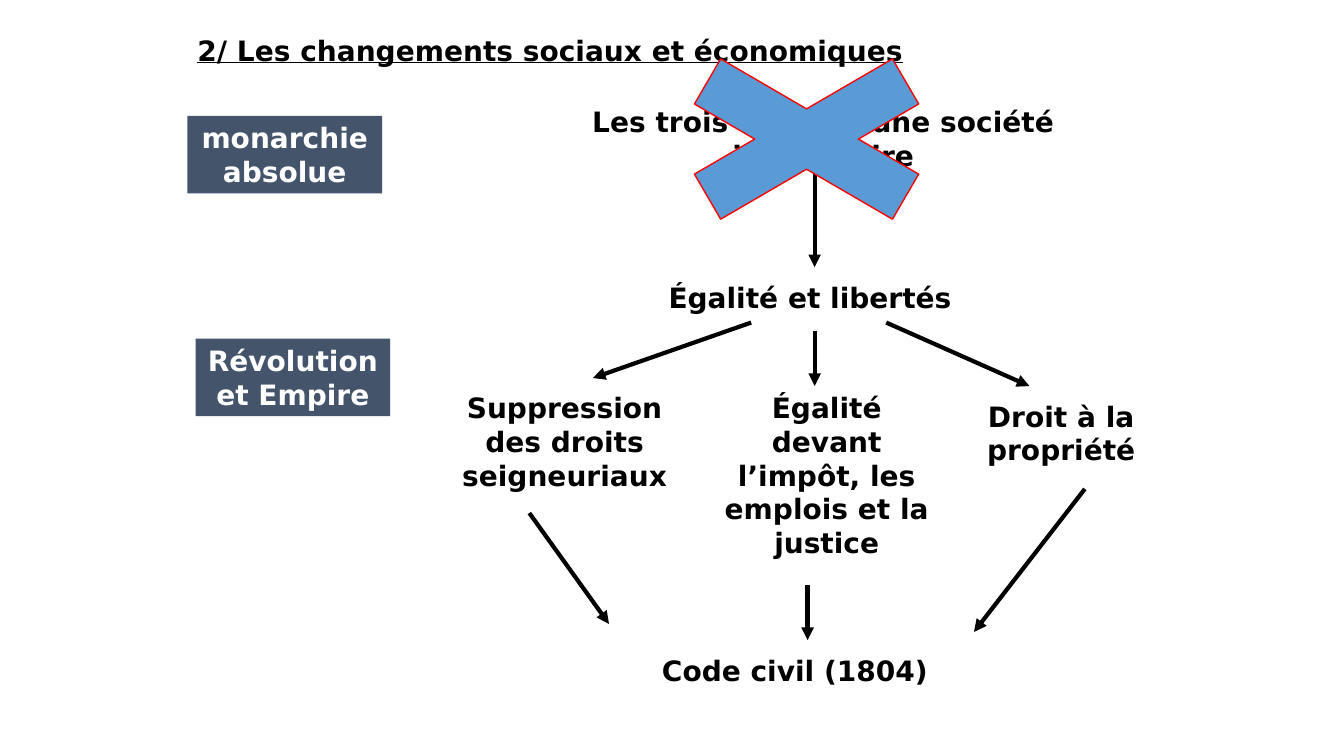
import pptx
import pptx.dml.color
import pptx.enum.shapes
import pptx.enum.text
import pptx.oxml
import pptx.oxml.ns
import pptx.util
from dataclasses import dataclass

Inches = pptx.util.Inches
Pt = pptx.util.Pt
Shape = pptx.enum.shapes.MSO_SHAPE
Align = pptx.enum.text.PP_ALIGN

FONT = "DejaVu Sans"
BLACK, WHITE, SLATE = "000000", "FFFFFF", "44546A"
BLUE, RED = "5B9BD5", "FF0000"
ROW = 0.43  # height of a one-line box
PAIR = 0.77  # height of a two-line box


@dataclass
class Box:
    text: str
    left: float
    top: float
    width: float
    height: float = ROW
    fill: str = WHITE
    ink: str = BLACK


@dataclass
class Arrow:
    x1: float
    y1: float
    x2: float
    y2: float


BOXES = [
    Box("Les trois ordres : une société inégalitaire", 4.86, 0.99, 6.61),
    Box("Égalité et libertés", 4.53, 2.73, 7.01),
    Box("Suppression des droits seigneuriaux", 4.46, 3.83, 2.28, 1.1),
    Box("Égalité devant l’impôt, les emplois et la justice", 7.06, 3.83, 2.28, 1.77),
    Box("Droit à la propriété", 9.58, 3.91, 1.89, PAIR),
    Box("Code civil (1804)", 4.38, 6.43, 7.01),
    # Period labels
    Box("monarchie absolue", 1.86, 1.15, 1.93, PAIR, SLATE, WHITE),
    Box("Révolution et Empire", 1.94, 3.36, 1.93, PAIR, SLATE, WHITE),
]

ARROWS = [
    Arrow(8.08, 1.47, 8.08, 2.65),
    # From equality to the three rights
    Arrow(7.45, 3.2, 5.88, 3.75),
    Arrow(8.08, 3.28, 8.08, 3.83),
    Arrow(8.79, 3.2, 10.21, 3.83),
    # From the rights to the civil code
    Arrow(5.25, 5.09, 6.04, 6.19),
    Arrow(8.01, 5.8, 8.01, 6.35),
    Arrow(10.76, 4.85, 9.66, 6.27),
]


def hue(code: str) -> pptx.dml.color.RGBColor:
    return pptx.dml.color.RGBColor.from_string(code)


def paint(shape, fill: str) -> None:
    shape.shadow.inherit = False
    shape.fill.solid()
    shape.fill.fore_color.rgb = hue(fill)


def write(shape, text: str, ink: str, align):
    frame = shape.text_frame
    frame.word_wrap = True
    frame.auto_size = pptx.enum.text.MSO_AUTO_SIZE.SHAPE_TO_FIT_TEXT
    frame.vertical_anchor = pptx.enum.text.MSO_ANCHOR.TOP
    para = frame.paragraphs[0]
    para.text = text
    para.alignment = align
    font = para.font
    font.name, font.size, font.bold = FONT, Pt(20), True
    font.color.rgb = hue(ink)
    return para


def draw_box(shapes, box: Box) -> None:
    shape = shapes.add_shape(Shape.RECTANGLE, Inches(box.left), Inches(box.top),
                             Inches(box.width), Inches(box.height))
    paint(shape, box.fill)
    shape.line.fill.background()
    write(shape, box.text, box.ink, Align.CENTER)


def draw_arrow(shapes, arrow: Arrow) -> None:
    line = shapes.add_connector(
        pptx.enum.shapes.MSO_CONNECTOR.STRAIGHT, Inches(arrow.x1), Inches(arrow.y1),
        Inches(arrow.x2), Inches(arrow.y2))
    line.line.color.rgb = hue(BLACK)
    line.line.width = Pt(3)
    # Arrowhead, and no shadow
    space = pptx.oxml.ns.nsdecls("a")
    head = pptx.oxml.parse_xml(f'<a:tailEnd {space} type="triangle"/>')
    line.line._get_or_add_ln().append(head)
    line._element.spPr.append(pptx.oxml.parse_xml(f"<a:effectLst {space}/>"))


def main() -> None:
    deck = pptx.Presentation()
    deck.slide_width, deck.slide_height = Inches(13.33), Inches(7.5)
    shapes = deck.slides.add_slide(deck.slide_layouts[6]).shapes

    # Title
    title = shapes.add_textbox(Inches(1.86), Inches(0.28), Inches(7.72), Inches(ROW))
    para = write(title, "2/ Les changements sociaux et économiques", BLACK, Align.LEFT)
    para.font.underline = True

    # Diagram
    for box in BOXES:
        draw_box(shapes, box)
    for arrow in ARROWS:
        draw_arrow(shapes, arrow)

    # Cross over the old order
    cross = shapes.add_shape(Shape.MATH_MULTIPLY, Inches(6.11), Inches(0.28),
                             Inches(3.78), Inches(2.2))
    paint(cross, BLUE)
    cross.line.color.rgb = hue(RED)
    cross.line.width = Pt(1)

    deck.save("out.pptx")


if __name__ == "__main__":
    main()
